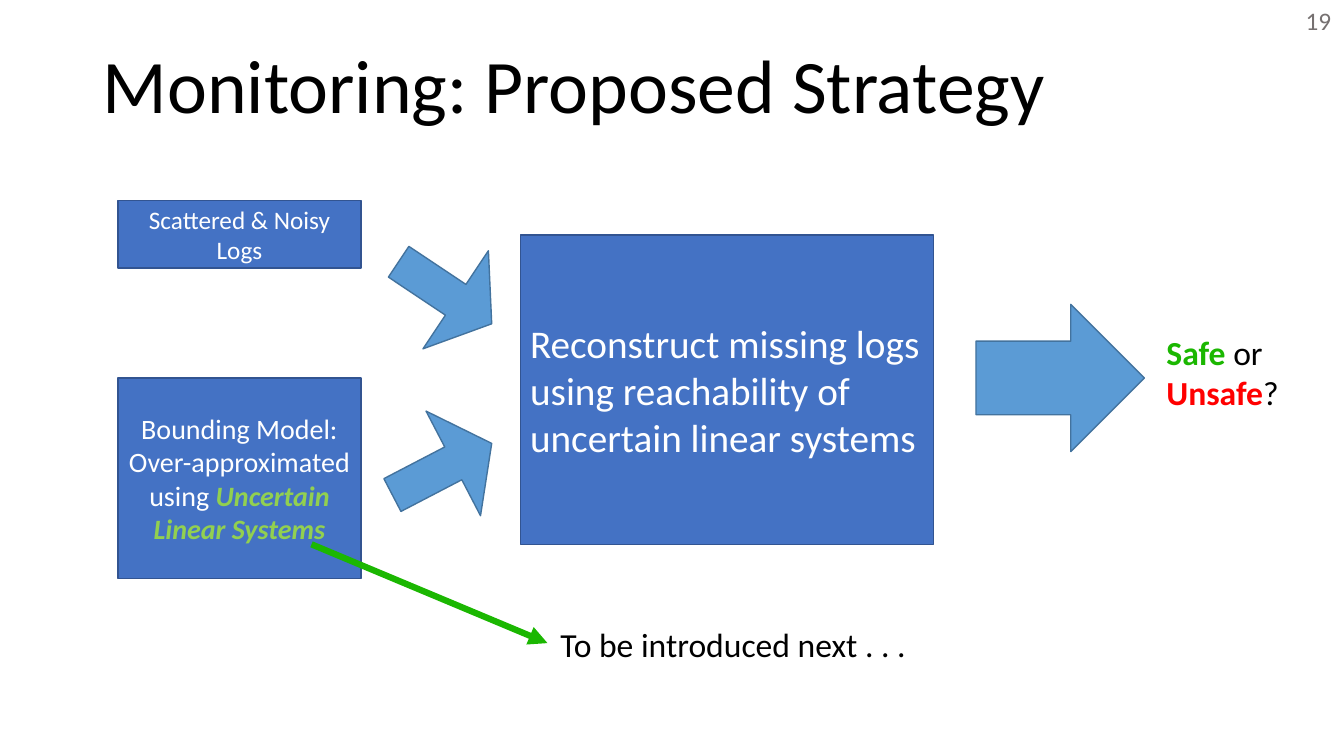
from collections import namedtuple
from dataclasses import dataclass

from lxml.etree import SubElement
from pptx import Presentation
from pptx.dml.color import RGBColor as RGB
from pptx.enum.shapes import MSO_CONNECTOR as LINE, MSO_SHAPE as SHAPE
from pptx.enum.text import MSO_ANCHOR as ANCHOR, PP_ALIGN as ALIGN
from pptx.oxml.ns import qn
from pptx.util import Inches, Pt

Box = namedtuple("Box", "x y w h")


@dataclass(frozen=True)
class Theme:
    font: str = "Calibri"
    black: str = "000000"
    white: str = "FFFFFF"
    gray: str = "767171"
    block: str = "4472C4"
    edge: str = "325491"
    arrow: str = "5B9BD5"
    rim: str = "43739E"
    lime: str = "92D050"
    green: str = "1BB701"
    red: str = "FF0000"
    title: int = 54
    main: int = 28
    note: int = 24
    model: int = 20
    small: int = 18


THEME = Theme()


def rgb(color):
    return RGB.from_string(color)


def within(area, x, y, w, h):
    return Box(area.x + x, area.y + y, w, h)


def place(box):
    return [Inches(v) for v in box]


def write(frame, runs, size, color, align=ALIGN.LEFT, anchor=ANCHOR.TOP):
    frame.word_wrap = True
    frame.vertical_anchor = anchor
    para = frame.paragraphs[0]
    para.alignment = align
    para.font.name = THEME.font
    para.font.size = Pt(size)
    para.font.color.rgb = rgb(color)
    for text, tint, *style in runs:
        run = para.add_run()
        run.text = text
        if tint:
            run.font.color.rgb = rgb(tint)
            run.font.bold = True
        if "italic" in style:
            run.font.italic = True
    return para


def label(slide, box, runs, size, color=THEME.black, anchor=ANCHOR.TOP):
    frame = slide.shapes.add_textbox(*place(box)).text_frame
    return write(frame, runs, size, color, anchor=anchor)


def solid(slide, kind, box, fill, edge):
    shape = slide.shapes.add_shape(kind, *place(box))
    shape.shadow.inherit = False
    shape.fill.solid()
    shape.fill.fore_color.rgb = rgb(fill)
    shape.line.color.rgb = rgb(edge)
    shape.line.width = Pt(1)
    return shape


def block(slide, box, runs, size, align=ALIGN.CENTER):
    shape = solid(slide, SHAPE.RECTANGLE, box, THEME.block, THEME.edge)
    write(shape.text_frame, runs, size, THEME.white, align, ANCHOR.MIDDLE)


def arrow(slide, box, turn=0, ratios=(0.5, 0.5)):
    shape = solid(slide, SHAPE.RIGHT_ARROW, box, THEME.arrow, THEME.rim)
    shape.rotation = turn
    for i, ratio in enumerate(ratios):
        shape.adjustments[i] = ratio


def header(slide, area):
    title = within(area, 0.92, 0.32, 11.5, 1.02)
    para = label(slide, title, [("Monitoring: Proposed Strategy", None)],
                 THEME.title, anchor=ANCHOR.BOTTOM)
    para.line_spacing = 0.9
    number = within(area, area.w - 0.48, 0, 0.49, 0.4)
    label(slide, number, [("19", None)], THEME.small, THEME.gray)


def inputs(slide, area):
    block(slide, within(area, 0, 0, area.w, 0.67),
          [("Scattered & Noisy Logs", None)], THEME.small)
    block(slide, within(area, 0, 1.76, area.w, 1.99),
          [("Bounding Model: Over-approximated using ", None),
           ("Uncertain Linear Systems", THEME.lime, "italic")], THEME.model)


def merge(slide, area):
    for x, y, turn in ((0.03, 0, 33.7), (0, 1.75, 332.5)):
        arrow(slide, within(area, x, y, 1.11, 1.17), turn, (0.313, 0.387))


def rebuild(slide, area):
    text = "Reconstruct missing logs using reachability of uncertain linear systems"
    block(slide, area, [(text, None)], THEME.main, ALIGN.LEFT)


def verdict(slide, area):
    arrow(slide, within(area, 0, 0, 1.67, area.h))
    label(slide, within(area, 1.79, 0.22, 1.59, 0.91),
          [("Safe", THEME.green), (" or ", None),
           ("Unsafe", THEME.red), ("?", None)], THEME.note)


def preview(slide, area):
    ends = (area.x, area.y, area.x + 2.34, area.y + 0.98)
    link = slide.shapes.add_connector(LINE.STRAIGHT, *place(ends))
    link.line.color.rgb = rgb(THEME.green)
    link.line.width = Pt(4.5)
    SubElement(link.line._get_or_add_ln(), qn("a:tailEnd"), type="triangle")
    SubElement(link._element.spPr, qn("a:effectLst"))
    label(slide, within(area, 2.37, 0.74, 3.97, 0.5),
          [("To be introduced next . . .", None)], THEME.note)


def main():
    deck = Presentation()
    deck.slide_width, deck.slide_height = Inches(13.33), Inches(7.5)
    slide = deck.slides.add_slide(deck.slide_layouts[6])
    header(slide, Box(0, 0, 13.33, 1.34))
    inputs(slide, Box(1.17, 1.99, 2.41, 3.75))
    rebuild(slide, Box(5.16, 2.33, 4.1, 3.07))
    merge(slide, Box(3.83, 2.32, 1.14, 2.92))
    verdict(slide, Box(9.68, 3.02, 3.38, 1.46))
    preview(slide, Box(3.09, 5.4, 6.34, 1.24))
    deck.save("out.pptx")


if __name__ == "__main__":
    main()
